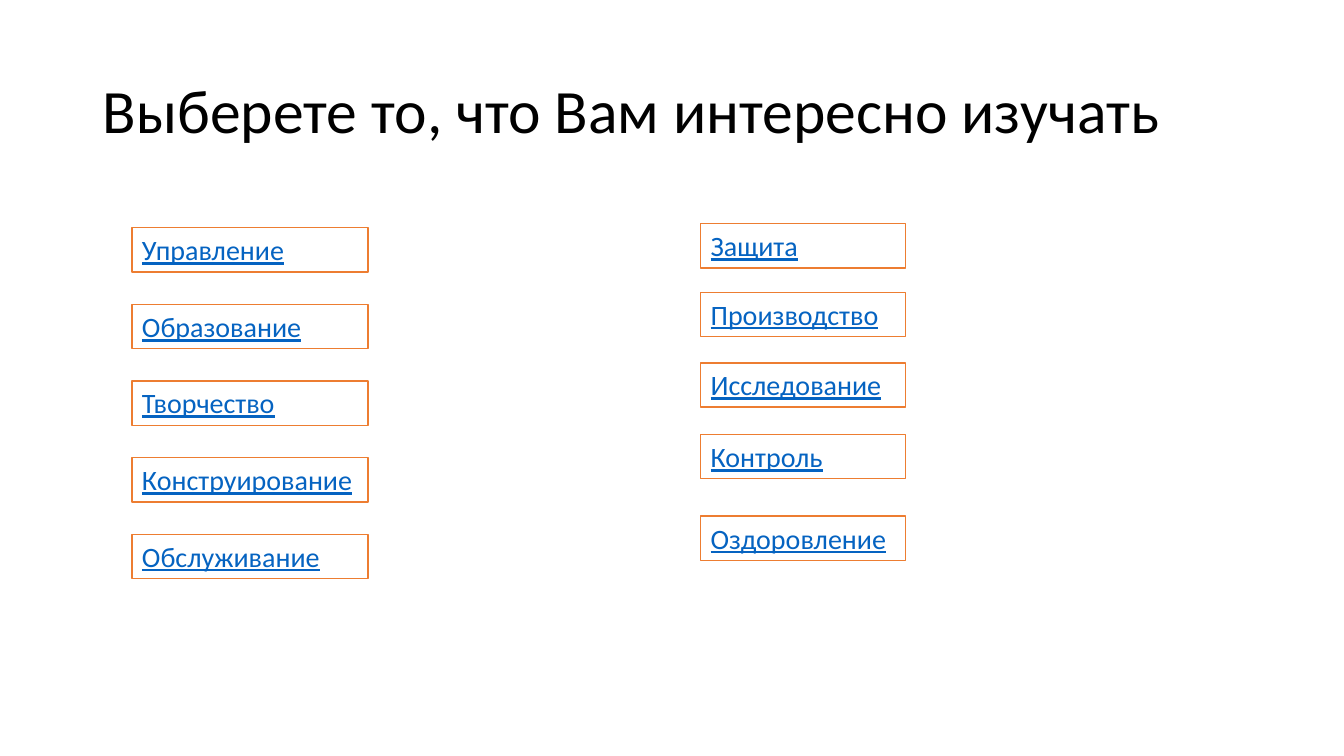
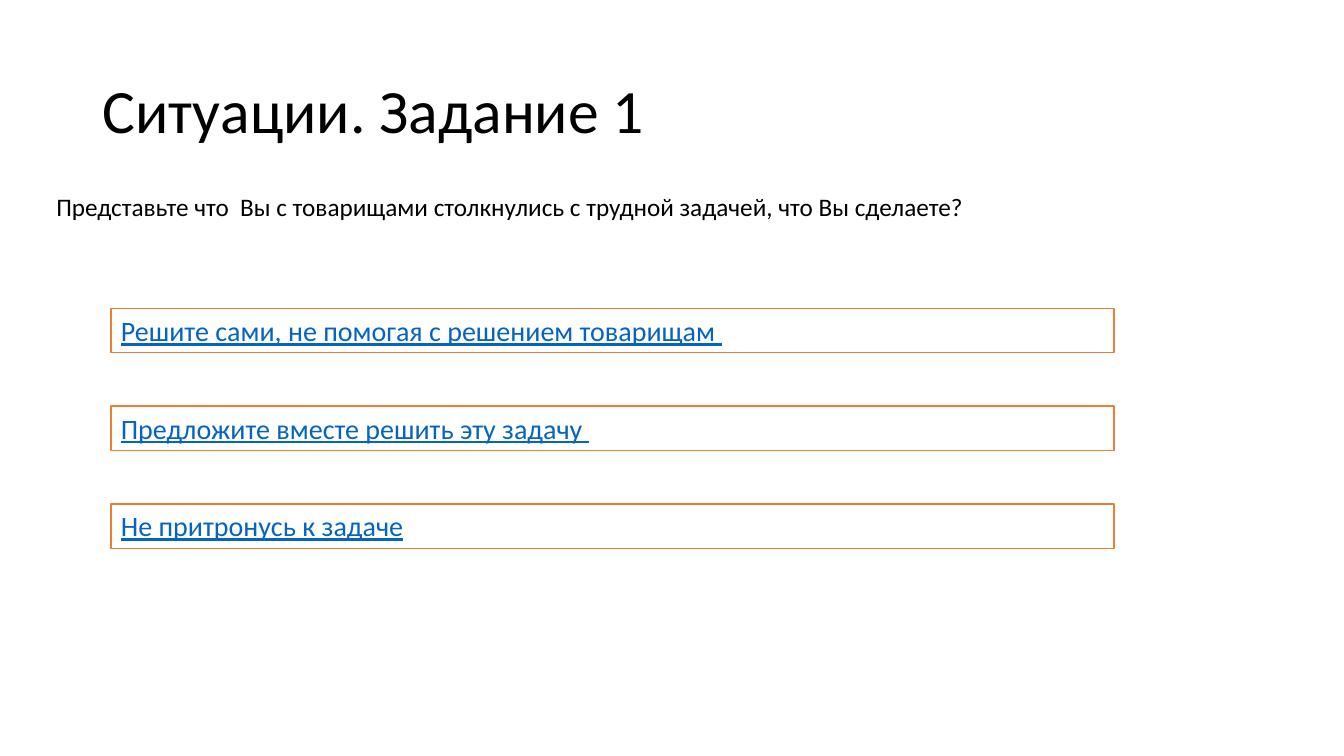
from pptx import Presentation
from pptx.dml.color import RGBColor
from pptx.enum.shapes import MSO_SHAPE
from pptx.enum.text import MSO_ANCHOR, MSO_AUTO_SIZE, PP_ALIGN
from pptx.util import Emu, Pt

EMU_PER_PX = 9144
SLIDE_WIDTH, SLIDE_HEIGHT = 1333, 750
TITLE_ONLY_LAYOUT = 5

BLACK = RGBColor(0x00, 0x00, 0x00)
WHITE = RGBColor(0xFF, 0xFF, 0xFF)
ORANGE = RGBColor(0xED, 0x7D, 0x31)
LINK_BLUE = RGBColor(0x05, 0x63, 0xC1)

TITLE_BOX = (92, 40, 1150, 145)
BUTTON_HEIGHT = 44


def px(length):
    return Emu(length * EMU_PER_PX)


def set_attributes(target, values):
    for attribute, value in values.items():
        setattr(target, attribute, value)


class Deck:
    FONT = "Calibri"
    TITLE = {"size": Pt(44), "underline": False}
    QUESTION = {"size": Pt(18), "underline": False}
    OPTION = {"size": Pt(20), "underline": True}
    FRAME = {"word_wrap": True, "auto_size": MSO_AUTO_SIZE.NONE}

    def __init__(self):
        self.presentation = Presentation()
        self.presentation.slide_width = px(SLIDE_WIDTH)
        self.presentation.slide_height = px(SLIDE_HEIGHT)
        self.slide = None

    def fill_text(self, shape, text, style, color, anchor, line_spacing=1.0):
        frame = shape.text_frame
        frame.text = text
        set_attributes(frame, {**self.FRAME, "vertical_anchor": anchor})
        paragraph = frame.paragraphs[0]
        set_attributes(paragraph, {"alignment": PP_ALIGN.LEFT, "line_spacing": line_spacing})
        font = paragraph.runs[0].font
        set_attributes(font, {"name": self.FONT, **style})
        font.color.rgb = color

    def add_slide(self, heading):
        layout = self.presentation.slide_layouts[TITLE_ONLY_LAYOUT]
        self.slide = self.presentation.slides.add_slide(layout)
        title = self.slide.shapes.title
        set_attributes(title, dict(zip(("left", "top", "width", "height"), map(px, TITLE_BOX))))
        self.fill_text(title, heading, self.TITLE, BLACK, MSO_ANCHOR.MIDDLE, 0.9)

    def add_question(self, text, box):
        question = self.slide.shapes.add_textbox(*map(px, box))
        self.fill_text(question, text, self.QUESTION, BLACK, MSO_ANCHOR.TOP)

    def add_option(self, text, left, top, width):
        box = (left, top, width, BUTTON_HEIGHT)
        button = self.slide.shapes.add_shape(MSO_SHAPE.RECTANGLE, *map(px, box))
        button.shadow.inherit = False
        button.fill.solid()
        button.fill.fore_color.rgb = WHITE
        button.line.color.rgb = ORANGE
        button.line.width = Pt(1)
        self.fill_text(button, text, self.OPTION, LINK_BLUE, MSO_ANCHOR.TOP)

    def add_options(self, labels, left, width, tops):
        for label, top in zip(labels, tops):
            self.add_option(label, left, top, width)

    def save(self):
        self.presentation.save("out.pptx")


def main():
    deck = Deck()

    deck.add_slide("Выберете то, что Вам интересно изучать")
    deck.add_options(
        ["Управление", "Образование", "Творчество", "Конструирование", "Обслуживание"],
        left=131, width=234, tops=range(226, 531, 76),
    )
    deck.add_options(
        ["Защита", "Производство", "Исследование", "Контроль", "Оздоровление"],
        left=695, width=203, tops=(222, 290, 360, 431, 512),
    )

    deck.add_slide("Ситуации. Задание 1")
    deck.add_question(
        "Представьте что  Вы с товарищами столкнулись с трудной задачей, что Вы сделаете?",
        (46, 185, 955, 40),
    )
    deck.add_options(
        [
            "Решите сами, не помогая с решением товарищам ",
            "Предложите вместе решить эту задачу ",
            "Не притронусь к задаче",
        ],
        left=110, width=995, tops=range(306, 501, 97),
    )

    deck.save()


if __name__ == "__main__":
    main()
